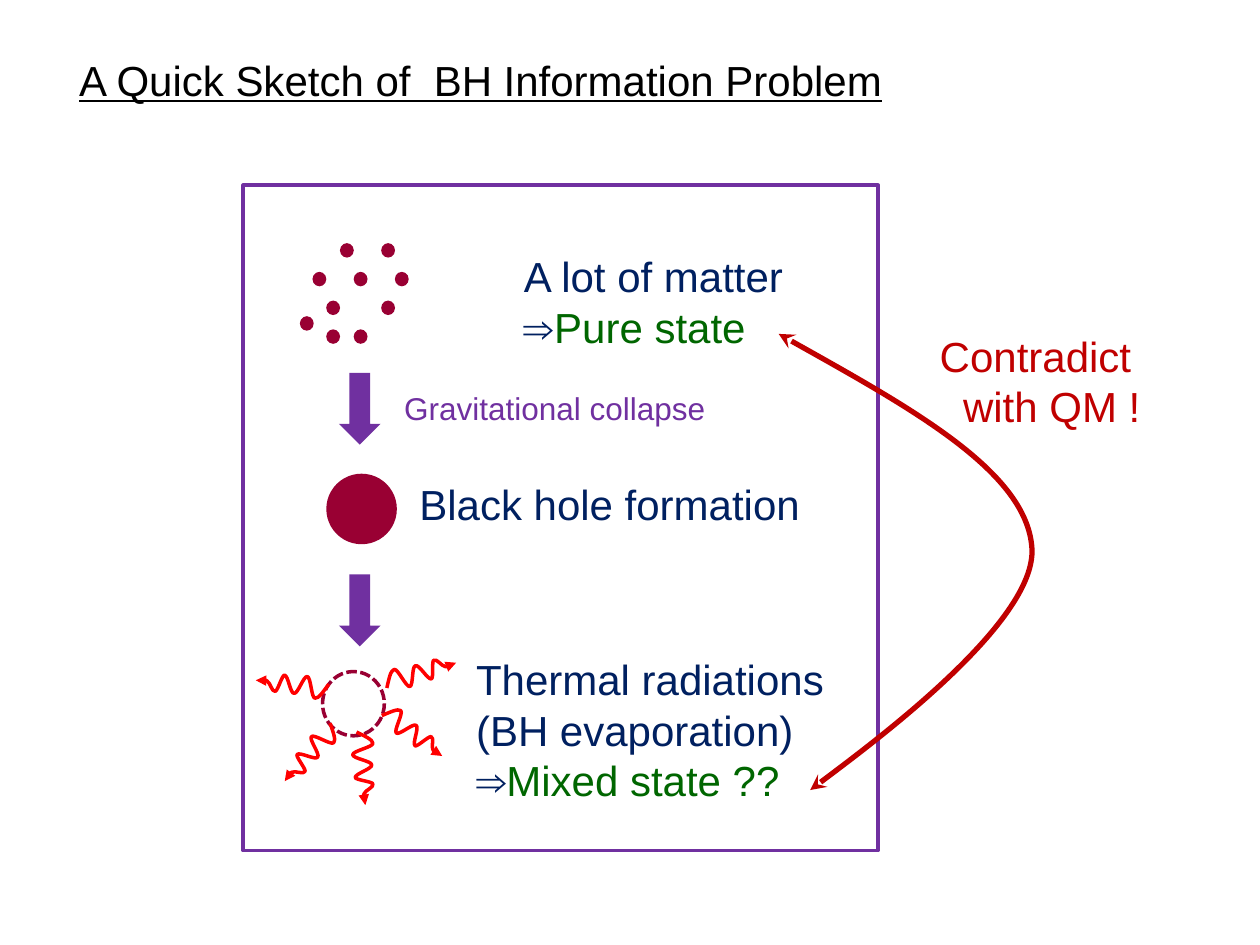
from lxml.etree import SubElement
from pptx import Presentation
from pptx.dml.color import RGBColor
from pptx.enum.dml import MSO_LINE
from pptx.enum.shapes import MSO_SHAPE
from pptx.enum.text import MSO_ANCHOR, MSO_AUTO_SIZE, PP_ALIGN
from pptx.oxml.ns import qn
from pptx.util import Inches, Pt

DOT = MSO_SHAPE.FLOWCHART_CONNECTOR
ARROW = MSO_SHAPE.RIGHT_ARROW
RECT = MSO_SHAPE.RECTANGLE
DASH = MSO_LINE.SQUARE_DOT
MIDDLE = MSO_ANCHOR.MIDDLE
CENTER = PP_ALIGN.CENTER
GROW = MSO_AUTO_SIZE.SHAPE_TO_FIT_TEXT

theme = {
    "font": "Arial", "big": Pt(24), "small": Pt(18),
    "thin": Pt(2), "thick": Pt(3),
    "black": RGBColor(0, 0, 0), "navy": RGBColor(0, 0x20, 0x60),
    "green": RGBColor(0, 0x66, 0), "plum": RGBColor(0x99, 0, 0x33),
    "violet": RGBColor(0x70, 0x30, 0xA0), "red": RGBColor(0xFF, 0, 0),
    "brick": RGBColor(0xC0, 0, 0),
}

deck = Presentation()
deck.slide_width, deck.slide_height = Inches(10), Inches(7.5)
cell = deck.slide_width // 100
slide = deck.slides.add_slide(deck.slide_layouts[5])
shapes = slide.shapes


def draw(kind, box, fill=None, line=None):
    shape = shapes.add_shape(kind, *[round(n * cell) for n in box])
    shape.shadow.inherit = False
    if fill:
        shape.fill.solid()
        shape.fill.fore_color.rgb = theme[fill]
    else:
        shape.fill.background()
    if line:
        shape.line.color.rgb = theme[line]
        shape.line.width = theme["thin"]
    else:
        shape.line.fill.background()
    return shape


def curve(points, color, width, ends):
    spots = [(p.real * cell, p.imag * cell) for p in points]
    pen = shapes.build_freeform(*spots[0], scale=1.0)
    pen.add_line_segments(spots[1:], close=False)
    shape = pen.convert_to_shape()
    shape.shadow.inherit = False
    shape.fill.background()
    shape.line.color.rgb = theme[color]
    shape.line.width = theme[width]
    track = shape._element.find(".//" + qn("a:path"))
    steps = track.findall(qn("a:lnTo"))
    for i in range(0, len(steps), 3):
        bend = SubElement(track, qn("a:cubicBezTo"))
        for step in steps[i:i + 3]:
            bend.append(step[0])
            track.remove(step)
    for tag, kind in ends:
        SubElement(shape.line._get_or_add_ln(), qn(tag), type=kind)


title = shapes.title
title.left, title.top, title.width, title.height = [
    round(n * cell) for n in (2.7, 2.8, 70.9, 7.1)]
frame = title.text_frame
frame.text = "A Quick Sketch of  BH Information Problem"
frame.vertical_anchor = MIDDLE
frame.paragraphs[0].alignment = CENTER
font = frame.paragraphs[0].runs[0].font
font.name, font.size, font.underline = theme["font"], theme["big"], True
font.color.rgb = theme["black"]

rows = [(2, 5), (0, 3, 6), (1, 5), (1, 3)]
dots = [(24.8 + 1.09 * col, 19.3 + 2.28 * row)
        for row, cols in enumerate(rows) for col in cols]
for x, y in dots + [(23.8, 25.1)]:
    draw(DOT, (x, y, 1.1, 1.15), fill="plum")

for y in (30.8, 46.8):
    draw(ARROW, (25.7, y, 5.7, 3.3), fill="violet").rotation = 90

draw(DOT, (25.9, 37.6, 5.6, 5.6), fill="plum")
draw(DOT, (25.6, 53.3, 4.9, 5.1), line="plum").line.dash_style = DASH

wave = [0, 0.6 + 0.3j, 1.3 + 0.6j, 1.3 + 0.9j, 1.3 + 1.2j, -0.3 + 1.5j,
        -0.3 + 1.8j, -0.3 + 2.1j, 1.2 + 2.3j, 1.2 + 2.6j, 1.3 + 2.9j,
        -0.1 + 3.3j, -0.1 + 3.6j, -0.1 + 3.8j, 1.1 + 3.9j, 1.3 + 4.1j,
        1.4 + 4.4j, 0.7 + 4.6j, 0.6 + 4.9j, 0.5 + 5.2j, 0.6 + 5.5j,
        0.7 + 5.8j]
rays = [(26.1 + 54.3j, 20.3 + 54j), (26.2 + 57.4j, 22.6 + 62j),
        (28.3 + 58.1j, 29 + 63.9j), (30.7 + 54.6j, 36.2 + 52.6j),
        (30.3 + 56.8j, 35.1 + 60j)]
for start, end in rays:
    turn = (end - start) / wave[-1]
    curve([start + p * turn for p in wave], "red", "thin",
          [("a:tailEnd", "triangle")])

draw(RECT, (19.3, 14.7, 50.4, 52.8), line="violet")

bow = [61.8 + 26.5j, 71.6 + 32j, 81.5 + 37.4j, 81.9 + 43.5j,
       82.3 + 49.5j, 64.3 + 62.7j, 64.3 + 62.7j]
curve(bow, "brick", "thick",
      [("a:headEnd", "stealth"), ("a:tailEnd", "stealth")])

notes = [
    ((40.6, 19.4, 22.8, 9.1), "big", "navy",
     [["A lot of matter"], ["⇒", "Pure state"]]),
    ((32.3, 37.5, 35.9, 5), "big", "navy", [["Black hole formation"]]),
    ((36.8, 51.4, 29.9, 13.1), "big", "navy",
     [["Thermal radiations"], ["(BH evaporation)"],
      ["⇒", "Mixed state ??"]]),
    ((73.6, 25.7, 18.1, 9.1), "big", "brick",
     [["Contradict"], ["with QM !"]]),
    ((31.1, 30.4, 26.8, 4), "small", "violet",
     [["Gravitational collapse"]]),
]
for box, size, color, lines in notes:
    note = shapes.add_textbox(*[round(n * cell) for n in box])
    frame = note.text_frame
    frame.word_wrap = False
    frame.auto_size = GROW
    for i, parts in enumerate(lines):
        para = frame.add_paragraph() if i else frame.paragraphs[0]
        if color == "brick" and i:
            para._p.get_or_add_pPr().set("marL", str(round(1.85 * cell)))
        for j, part in enumerate(parts):
            run = para.add_run()
            run.text = part
            run.font.name, run.font.size = theme["font"], theme[size]
            run.font.color.rgb = theme["green" if j else color]

deck.save("out.pptx")
